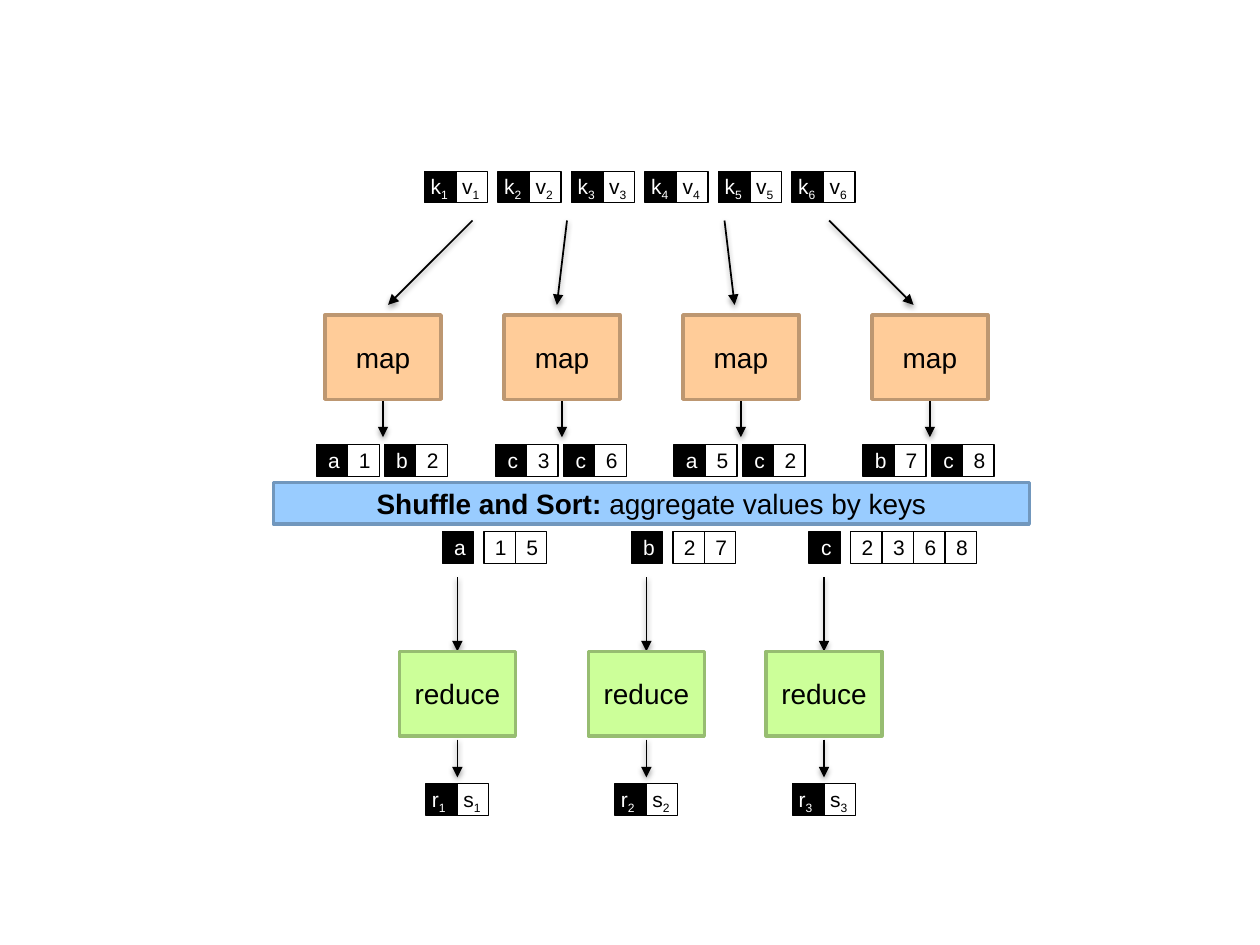
"""Draw a MapReduce data flow: map, shuffle and sort, reduce."""
import dataclasses
import typing

import lxml.etree
import pptx
import pptx.dml.color
import pptx.enum.shapes
import pptx.enum.text
import pptx.oxml.ns
import pptx.util

Inches = pptx.util.Inches
Pt = pptx.util.Pt
ALIGN = pptx.enum.text.PP_ALIGN
RECTANGLE = pptx.enum.shapes.MSO_SHAPE.RECTANGLE
BLACK, WHITE = "000000", "FFFFFF"
STAGE_WIDTH, STAGE_HEIGHT = 0.92, 0.67
CELL = 0.25
PAIR_STEP = 0.54
INPUT_STEP = 0.583


@dataclasses.dataclass
class Cell:
    label: str
    left: float
    top: float
    is_key: bool = False
    subscript: str = ""


@dataclasses.dataclass
class Mapper:
    left: float
    input_from: float
    input_to: float
    pairs: str


@dataclasses.dataclass
class Reducer:
    left: float
    key: str
    values: str


MAPPERS = [
    Mapper(2.58, 3.75, 3.08, "a1 b2"),
    Mapper(4, 4.5, 4.42, "c3 c6"),
    Mapper(5.42, 5.75, 5.83, "a5 c2"),
    Mapper(6.92, 6.58, 7.25, "b7 c8"),
]
REDUCERS = [
    Reducer(3.17, "a", "15"),
    Reducer(4.67, "b", "27"),
    Reducer(6.08, "c", "2368"),
]


def rgb(value: str) -> pptx.dml.color.RGBColor:
    return pptx.dml.color.RGBColor.from_string(value)


def add_run(paragraph: typing.Any, text: str, size: float, color: str, bold: bool = False) -> typing.Any:
    run = paragraph.add_run()
    run.text = text
    run.font.name = "Arial"
    run.font.size = Pt(size)
    run.font.bold = bold
    run.font.color.rgb = rgb(color)
    return run


def add_rectangle(shapes: typing.Any, left: float, top: float, width: float, height: float,
                  fill: str, line: str, weight: float) -> typing.Any:
    rectangle = shapes.add_shape(RECTANGLE, Inches(left), Inches(top), Inches(width), Inches(height))
    rectangle.shadow.inherit = False
    if fill:
        rectangle.fill.solid()
        rectangle.fill.fore_color.rgb = rgb(fill)
    else:
        rectangle.fill.background()
    rectangle.line.color.rgb = rgb(line)
    rectangle.line.width = Pt(weight)
    return rectangle


def add_stage(shapes: typing.Any, left: float, top: float, width: float, height: float,
              fill: str, line: str, text: str, bold_text: str = "") -> None:
    stage = add_rectangle(shapes, left, top, width, height, fill, line, 2)
    stage.text_frame.vertical_anchor = pptx.enum.text.MSO_ANCHOR.MIDDLE
    paragraph = stage.text_frame.paragraphs[0]
    paragraph.alignment = ALIGN.CENTER
    if bold_text:
        add_run(paragraph, bold_text, 16, BLACK, bold=True)
    add_run(paragraph, text, 16, BLACK)


def add_arrow(shapes: typing.Any, x1: float, y1: float, x2: float, y2: float) -> None:
    arrow = shapes.add_connector(pptx.enum.shapes.MSO_CONNECTOR.STRAIGHT,
                                 Inches(x1), Inches(y1), Inches(x2), Inches(y2))
    arrow.line.color.rgb = rgb(BLACK)
    arrow.line.width = Pt(1)
    qn = pptx.oxml.ns.qn
    lxml.etree.SubElement(arrow.line._get_or_add_ln(), qn("a:tailEnd"), type="triangle")
    effects = lxml.etree.SubElement(arrow._element.spPr, qn("a:effectLst"))
    shadow = lxml.etree.SubElement(effects, qn("a:outerShdw"), blurRad="40000", dist="20000",
                                   dir="5400000", rotWithShape="0")
    tint = lxml.etree.SubElement(shadow, qn("a:srgbClr"), val=BLACK)
    lxml.etree.SubElement(tint, qn("a:alpha"), val="38000")


def add_cell(shapes: typing.Any, cell: Cell) -> None:
    add_rectangle(shapes, cell.left, cell.top, CELL, CELL, BLACK if cell.is_key else "", BLACK, 0.75)
    inset, width = (0.05, 0.35) if cell.subscript else (0.01, 0.3)
    label = shapes.add_textbox(Inches(cell.left - inset), Inches(cell.top - 0.03), Inches(width), Inches(0.3))
    frame = label.text_frame
    frame.word_wrap = False
    frame.auto_size = pptx.enum.text.MSO_AUTO_SIZE.SHAPE_TO_FIT_TEXT
    paragraph = frame.paragraphs[0]
    paragraph.alignment = ALIGN.CENTER if cell.is_key and not cell.subscript else ALIGN.LEFT
    color = WHITE if cell.is_key else BLACK
    add_run(paragraph, cell.label, 12, color)
    if cell.subscript:
        index = add_run(paragraph, cell.subscript, 12, color)
        index._r.get_or_add_rPr().set("baseline", "-25000")


def add_cells(shapes: typing.Any, cells: list[Cell]) -> None:
    group = shapes.add_group_shape()
    for cell in cells:
        add_cell(group.shapes, cell)


def pair(key: str, value: str, left: float, top: float, subscript: str = "") -> list[Cell]:
    return [Cell(key, left, top, True, subscript), Cell(value, left + CELL, top, False, subscript)]


def main() -> None:
    presentation = pptx.Presentation()
    presentation.slide_width, presentation.slide_height = Inches(10), Inches(7.5)
    shapes = presentation.slides.add_slide(presentation.slide_layouts[6]).shapes

    for mapper in MAPPERS:
        center = mapper.left + STAGE_WIDTH / 2
        add_arrow(shapes, mapper.input_from, 1.75, mapper.input_to, 2.42)
        add_arrow(shapes, center, 3.17, center, 3.47)
        add_stage(shapes, mapper.left, 2.5, STAGE_WIDTH, STAGE_HEIGHT, "FFCC99", "BD9771", "map")
    add_stage(shapes, 2.17, 3.83, 6, 0.33, "99CCFF", "7197BD",
              " aggregate values by keys", "Shuffle and Sort:")
    for reducer in REDUCERS:
        center = reducer.left + STAGE_WIDTH / 2
        add_arrow(shapes, center, 4.58, center, 5.17)
        add_arrow(shapes, center, 5.87, center, 6.17)
        add_stage(shapes, reducer.left, 5.17, STAGE_WIDTH, STAGE_HEIGHT, "CCFF99", "97BD71", "reduce")

    inputs = []
    for i in range(6):
        inputs += pair("k", "v", 3.37 + i * INPUT_STEP, 1.36, str(i + 1))
    add_cells(shapes, inputs)

    for mapper in MAPPERS:
        outputs = []
        for i, (key, value) in enumerate(mapper.pairs.split()):
            outputs += pair(key, value, mapper.left - 0.07 + i * PAIR_STEP, 3.53)
        add_cells(shapes, outputs)

    for number, reducer in enumerate(REDUCERS, 1):
        key_left = reducer.left + 0.34
        values = [Cell(value, key_left + 0.33 + i * CELL, 4.22) for i, value in enumerate(reducer.values)]
        add_cells(shapes, [Cell(reducer.key, key_left, 4.22, True), *values])
        add_cells(shapes, pair("r", "s", reducer.left + 0.21, 6.22, str(number)))

    presentation.save("out.pptx")


if __name__ == "__main__":
    main()
